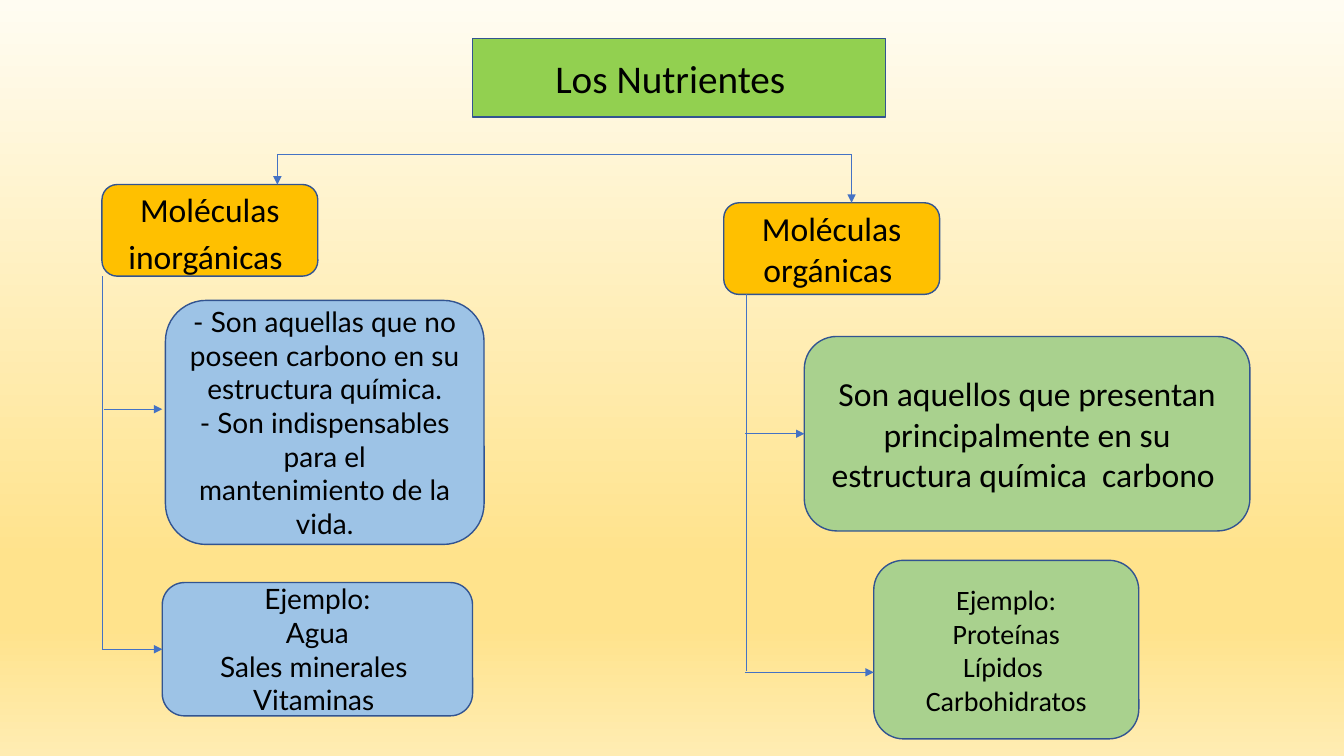
from lxml import etree
from pptx import Presentation
from pptx.dml.color import RGBColor
from pptx.enum import shapes, text
from pptx.oxml import ns
from pptx.util import Cm, Pt

OUTLINE, ARROW, BLACK = "325491", "4472C4", "000000"
ORANGE, BLUE, GREEN = "FFC000", "9DC3E6", "A9D18E"
BACKGROUND_STOPS = [(0, "FFFCF2"), (74, "FFE38C"), (83, "FFE38C"), (100, "FFECB2")]


def color(value):
    return RGBColor.from_string(value)


def add_child(parent, tag, **attributes):
    return etree.SubElement(parent, ns.qn(tag), attributes)


def paint_background(slide):
    fill = slide.background.fill
    fill.gradient()
    fill.gradient_angle = 270
    stops = slide.element.find(".//" + ns.qn("a:gsLst"))
    for old_stop in list(stops):
        stops.remove(old_stop)
    for percent, value in BACKGROUND_STOPS:
        stop = add_child(stops, "a:gs", pos=str(percent * 1000))
        add_child(stop, "a:srgbClr", val=value)


def style_box(box, fill):
    box.fill.solid()
    box.fill.fore_color.rgb = color(fill)
    box.line.color.rgb = color(OUTLINE)
    box.line.width = Pt(1)
    box.shadow.inherit = False


def write(box, lines, size, font="Calibri"):
    """Each line is a string, or a list of (words, size) runs."""
    frame = box.text_frame
    frame_format = {
        "word_wrap": True,
        "auto_size": text.MSO_AUTO_SIZE.NONE,
        "vertical_anchor": text.MSO_ANCHOR.MIDDLE,
    }
    for name, value in frame_format.items():
        setattr(frame, name, value)
    for index, line in enumerate(lines):
        paragraph = frame.add_paragraph() if index else frame.paragraphs[0]
        paragraph.alignment = text.PP_ALIGN.CENTER
        sizes = []
        if isinstance(line, str):
            paragraph.text = line
        else:
            for words, run_size in line:
                paragraph.add_run().text = words
                sizes.append(run_size)
        for position, run in enumerate(paragraph.runs):
            run_format = {"name": font, "size": Pt(sizes[position] if sizes else size)}
            for name, value in run_format.items():
                setattr(run.font, name, value)
            run.font.color.rgb = color(BLACK)


def add_title(slide):
    title = slide.shapes.title
    place = {"left": Cm(11.91), "top": Cm(0.97), "width": Cm(10.41), "height": Cm(1.98)}
    for name, value in place.items():
        setattr(title, name, value)
    outline = add_child(title.element.spPr, "a:prstGeom", prst="roundRect")
    add_child(outline, "a:avLst")
    style_box(title, "92D050")
    write(title, ["Los Nutrientes"], 28)
    title.text_frame.margin_right = Cm(0.7)


def add_box(slide, place, fill, lines, size, font="Calibri"):
    box = slide.shapes.add_shape(
        shapes.MSO_SHAPE.ROUNDED_RECTANGLE, *[Cm(length) for length in place])
    style_box(box, fill)
    write(box, lines, size, font)
    return box


def add_line(slide, start, end, arrow=False, target=None):
    """Draw a line; a target box is joined at the middle of its left side."""
    line = slide.shapes.add_connector(
        shapes.MSO_CONNECTOR.STRAIGHT, *[Cm(length) for length in start + end])
    line.line.color.rgb = color(ARROW)
    line.line.width = Pt(0.5)
    if arrow:
        add_child(line.line._get_or_add_ln(), "a:tailEnd", type="triangle")
    add_child(line.element.spPr, "a:effectLst")
    if target is not None:
        line.end_connect(target, 1)


def main():
    deck = Presentation()
    deck.slide_width, deck.slide_height = Cm(33.87), Cm(19.05)
    slide = deck.slides.add_slide(deck.slide_layouts[5])
    paint_background(slide)
    add_title(slide)

    # Organic and inorganic headings
    add_box(slide, (18.24, 5.11, 5.44, 2.31), ORANGE, ["Moléculas orgánicas "], 24)
    add_box(slide, (2.57, 4.65, 5.44, 2.31), ORANGE,
            [[("Moléculas", 24), (" ", 28), ("inorgánicas", 24), (" ", 28)]], 24)

    # Inorganic definition and examples
    add_box(slide, (4.17, 7.57, 8.03, 6.15), BLUE,
            ["- Son aquellas que no poseen carbono en su estructura química.",
             "- Son indispensables para el mantenimiento de la vida."], 20, "Lato")
    inorganic_examples = add_box(
        slide, (4.09, 14.68, 7.82, 3.36), BLUE,
        ["Ejemplo:", "Agua", "Sales minerales ", "Vitaminas "], 20, "Lato")

    # Organic definition and examples
    organic_definition = add_box(
        slide, (20.27, 8.48, 11.23, 4.9), GREEN,
        ["Son aquellos que presentan principalmente en su estructura química  carbono "], 24)
    add_box(slide, (22.02, 14.12, 6.68, 4.5), GREEN,
            ["Ejemplo:", "Proteínas\vLípidos ", "Carbohidratos"], 20)

    # Fork from the title to both headings
    add_line(slide, (6.99, 3.89), (21.46, 3.89))
    add_line(slide, (21.46, 3.89), (21.46, 5.11), arrow=True)
    add_line(slide, (6.99, 3.89), (6.99, 4.65), arrow=True)

    # Trunks below the headings
    add_line(slide, (2.57, 6.96), (2.57, 16.36))
    add_line(slide, (18.82, 7.42), (18.82, 16.92))

    # Branches to the definitions and examples
    add_line(slide, (18.77, 10.93), (20.27, 10.93), arrow=True, target=organic_definition)
    add_line(slide, (18.77, 16.94), (22.02, 16.94), arrow=True)
    add_line(slide, (2.57, 16.36), (4.09, 16.36), arrow=True, target=inorganic_examples)
    add_line(slide, (2.62, 10.31), (4.09, 10.31), arrow=True)

    deck.save("out.pptx")


if __name__ == "__main__":
    main()
